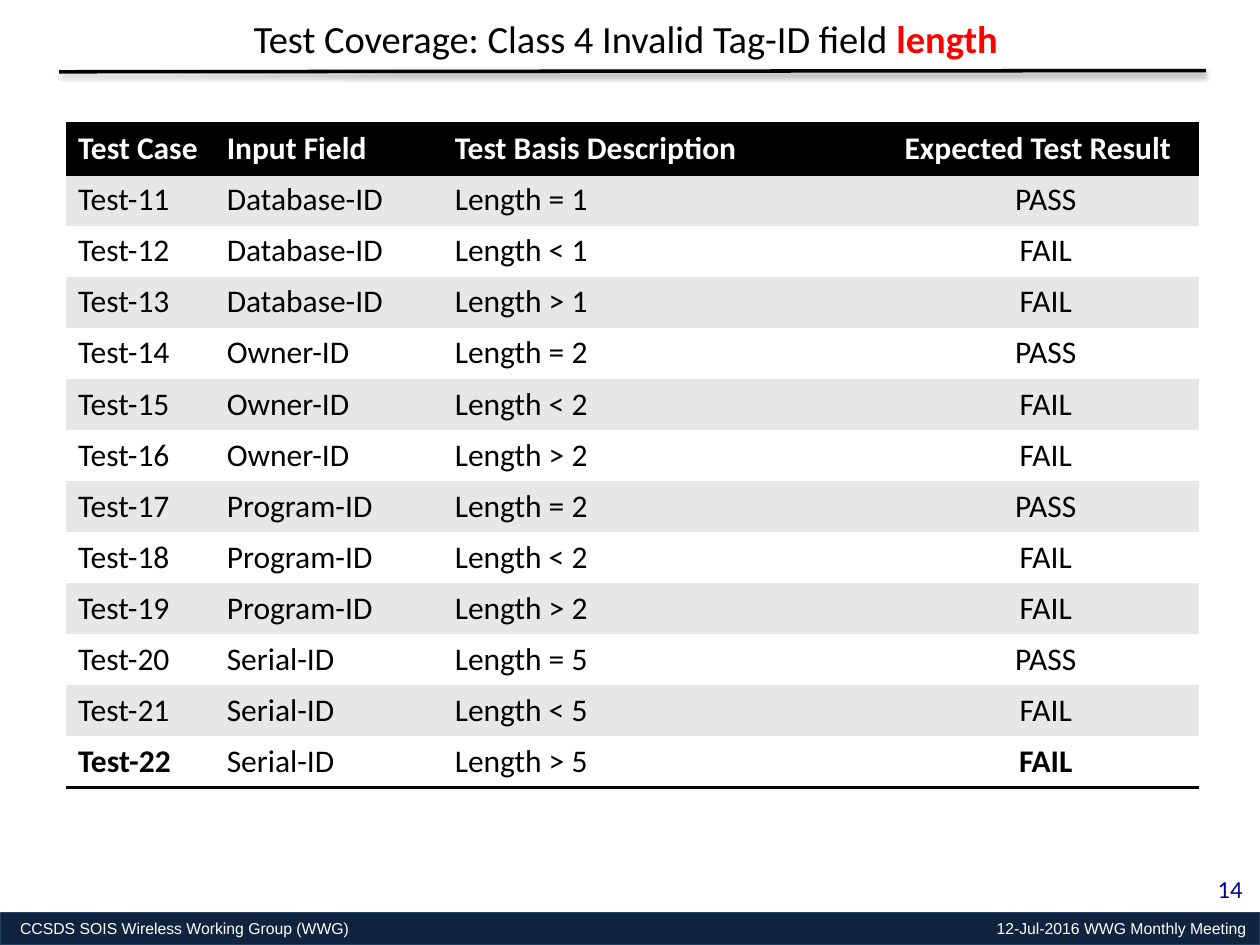
from dataclasses import dataclass
from itertools import product

from lxml.etree import SubElement
from pptx import Presentation
from pptx.dml.color import RGBColor as Color
from pptx.enum.shapes import MSO_CONNECTOR as Connector, MSO_SHAPE as Shape
from pptx.enum.text import MSO_ANCHOR as Anchor, PP_ALIGN as Align
from pptx.oxml.ns import qn
from pptx.util import Inches, Pt


@dataclass(frozen=True)
class Theme:
    """Colours, fonts and type sizes of the slide."""
    black: str = "000000"
    white: str = "FFFFFF"
    band: str = "E7E7E7"
    accent: str = "FF0000"
    number: str = "000090"
    footer: str = "0F243E"
    footer_line: str = "254061"
    body_font: str = "Calibri"
    footer_font: str = "Arial"
    title_size: int = 22
    table_size: int = 18
    number_size: int = 14
    footer_size: int = 9
    rule_width: int = 2


THEME = Theme()
NO_GRID_STYLE = "{2D5ABB26-0587-4C30-8999-92F81FD0307C}"
HEADERS = ("Test Case", "Input Field", "Test Basis Description", "Expected Test Result")
FIELD_LENGTHS = (("Database-ID", 1), ("Owner-ID", 2), ("Program-ID", 2), ("Serial-ID", 5))
OUTCOMES = (("=", "PASS"), ("<", "FAIL"), (">", "FAIL"))
COLUMN_WIDTHS = (1.18, 1.81, 3.57, 2.44)
TABLE_HEIGHT = 5.27


def apply_format(target, values):
    """Set each named attribute of the target."""
    for name, value in values.items():
        setattr(target, name, value)


def add_run(paragraph, text, size, color, font=THEME.body_font, bold=False):
    """Append a formatted run to the paragraph."""
    run = paragraph.add_run()
    run.text = text
    apply_format(run.font, {"name": font, "size": Pt(size), "bold": bold})
    run.font.color.rgb = Color.from_string(color)


def add_text(slide, box, alignment, runs):
    """Add a one-paragraph text box made of the given runs."""
    frame = slide.shapes.add_textbox(*map(Inches, box)).text_frame
    apply_format(frame, {"word_wrap": True, "vertical_anchor": Anchor.MIDDLE})
    paragraph = frame.paragraphs[0]
    paragraph.alignment = alignment
    for run in runs:
        add_run(paragraph, **run)


def add_footer(slide, left_text, right_text):
    """Add the bottom bar with text at both ends, parted by a right tab."""
    bar = slide.shapes.add_shape(Shape.RECTANGLE, *map(Inches, (0, 7.24, 10, 0.26)))
    bar.shadow.inherit = False
    bar.fill.solid()
    bar.fill.fore_color.rgb = Color.from_string(THEME.footer)
    bar.line.color.rgb = Color.from_string(THEME.footer_line)
    bar.line.width = Pt(0.75)
    apply_format(bar.text_frame, {
        "margin_left": Inches(0.16), "margin_right": Inches(0.05),
        "margin_top": Inches(0.06), "margin_bottom": Inches(0.06),
        "word_wrap": True, "vertical_anchor": Anchor.MIDDLE,
    })
    paragraph = bar.text_frame.paragraphs[0]
    paragraph.alignment = Align.LEFT
    tabs = SubElement(paragraph._p.get_or_add_pPr(), qn("a:tabLst"))
    SubElement(tabs, qn("a:tab"), pos=str(Inches(9.73)), algn="r")
    add_run(paragraph, f"{left_text}\t{right_text}", THEME.footer_size, THEME.white,
            THEME.footer_font)


def add_title_rule(slide):
    """Add the line under the title with its soft shadow."""
    rule = slide.shapes.add_connector(
        Connector.STRAIGHT, *map(Inches, (0.47, 0.57, 9.57, 0.56)))
    rule.line.color.rgb = Color.from_string(THEME.black)
    rule.line.width = Pt(THEME.rule_width)
    effects = SubElement(rule._element.spPr, qn("a:effectLst"))
    shadow = SubElement(effects, qn("a:outerShdw"), blurRad=str(Pt(3.1)),
                        dist=str(Pt(1.6)), dir="5400000", rotWithShape="0")
    color = SubElement(shadow, qn("a:srgbClr"), val=THEME.black)
    SubElement(color, qn("a:alpha"), val="38000")


def add_border(cell, side):
    """Draw a solid black border on one side of the cell."""
    line = SubElement(cell._tc.get_or_add_tcPr(), qn(f"a:{side}"),
                      w=str(Pt(THEME.rule_width)))
    fill = SubElement(line, qn("a:solidFill"))
    SubElement(fill, qn("a:srgbClr"), val=THEME.black)


def fill_cell(cell, text, fill, color, bold, alignment, borders):
    """Write and format one table cell."""
    for side in borders:
        add_border(cell, side)
    cell.fill.solid()
    cell.fill.fore_color.rgb = Color.from_string(fill)
    paragraph = cell.text_frame.paragraphs[0]
    paragraph.alignment = alignment
    add_run(paragraph, text, THEME.table_size, color, bold=bold)


def test_rows():
    """List the test cases, three outcomes for each field."""
    cases = product(FIELD_LENGTHS, OUTCOMES)
    return [(f"Test-{number}", field, f"Length {sign} {length}", result)
            for number, ((field, length), (sign, result)) in enumerate(cases, 11)]


def add_test_table(slide):
    """Add the banded table of test cases."""
    rows = [HEADERS, *test_rows()]
    last_row, last_column = len(rows) - 1, len(HEADERS) - 1
    table = slide.shapes.add_table(
        len(rows), len(HEADERS),
        *map(Inches, (0.52, 0.98, sum(COLUMN_WIDTHS), TABLE_HEIGHT))).table
    table._tbl.tblPr.find(qn("a:tableStyleId")).text = NO_GRID_STYLE
    for column, width in zip(table.columns, COLUMN_WIDTHS):
        column.width = Inches(width)
    for row_index, texts in enumerate(rows):
        table.rows[row_index].height = Inches(TABLE_HEIGHT / len(rows))
        header, last = row_index == 0, row_index == last_row
        band = THEME.band if row_index % 2 else THEME.white
        for column_index, text in enumerate(texts):
            centred = column_index == last_column and not header
            fill_cell(
                table.cell(row_index, column_index), text,
                fill=THEME.black if header else band,
                color=THEME.white if header else THEME.black,
                bold=header or (last and column_index in (0, last_column)),
                alignment=Align.CENTER if centred else Align.LEFT,
                borders=("lnT", "lnB") if header else ("lnB",) if last else ())


def main():
    """Build and save the slide."""
    presentation = Presentation()
    apply_format(presentation, {"slide_width": Inches(10), "slide_height": Inches(7.5)})
    slide = presentation.slides.add_slide(presentation.slide_layouts[6])
    add_footer(slide, "CCSDS SOIS Wireless Working Group (WWG)",
               "12-Jul-2016 WWG Monthly Meeting")
    add_text(slide, (9.3, 6.88, 0.66, 0.35), Align.RIGHT, [
        {"text": "14", "size": THEME.number_size, "color": THEME.number}])
    add_text(slide, (0.5, 0.08, 9, 0.45), Align.CENTER, [
        {"text": "Test Coverage: Class 4 Invalid Tag-ID field ",
         "size": THEME.title_size, "color": THEME.black},
        {"text": "length ", "size": THEME.title_size, "color": THEME.accent,
         "bold": True}])
    add_title_rule(slide)
    add_test_table(slide)
    presentation.save("out.pptx")


if __name__ == "__main__":
    main()
